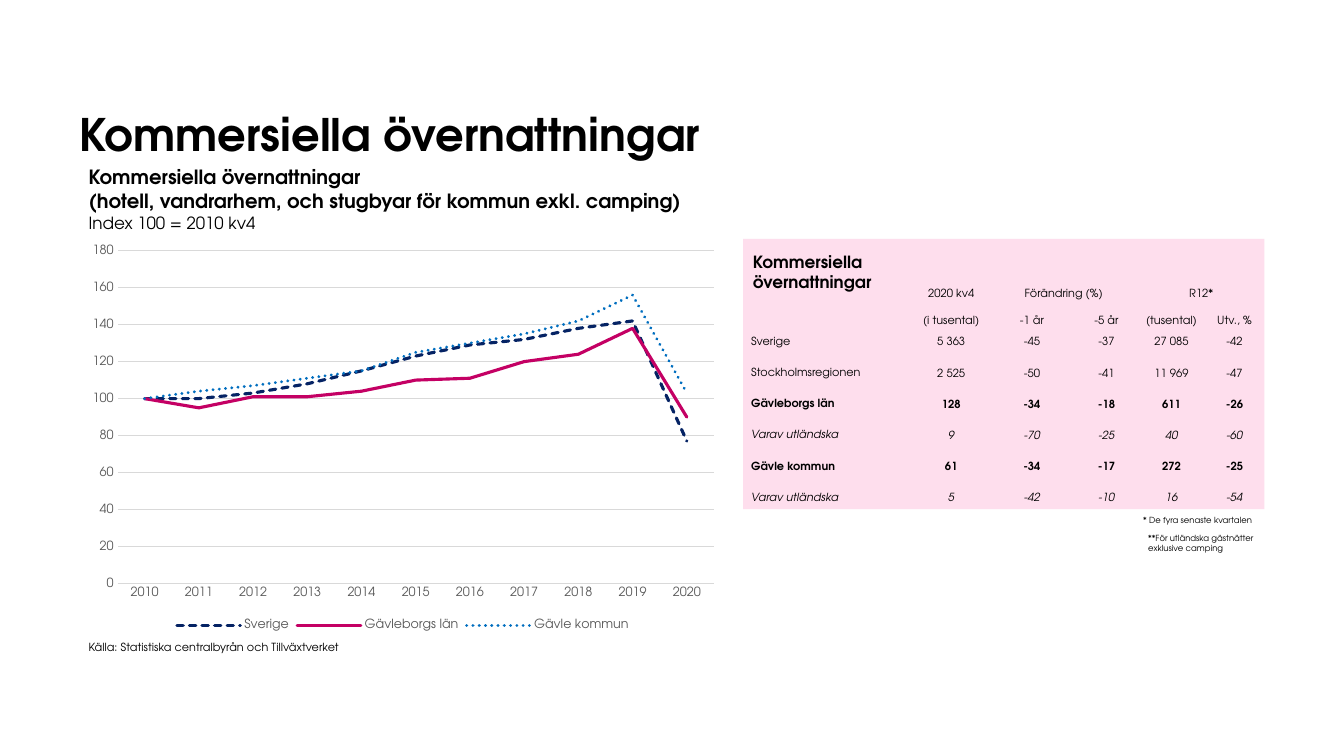
import pptx
import pptx.chart.data
import pptx.dml.color
import pptx.enum.chart
import pptx.enum.dml
import pptx.enum.shapes
import pptx.enum.text
import pptx.oxml.ns
import pptx.util
from lxml import etree

Inches = pptx.util.Inches
Pt = pptx.util.Pt
qn = pptx.oxml.ns.qn
Align = pptx.enum.text.PP_ALIGN
Anchor = pptx.enum.text.MSO_ANCHOR
Dash = pptx.enum.dml.MSO_LINE

FACE = "TeX Gyre Adventor"
NO_GRID = "{2D5ABB26-0587-4C30-8999-92F81FD0307C}"
COLS = [1.69, 0.75, 0.85, 0.63, 0.66, 0.59]
ROWS = [0.26, 0.27] + [0.31] * 6
STAYS = [
    ["", "2020 kv4", "Förändring (%)", "", "R12*", ""],
    ["", "(i tusental)", "-1 år", "-5 år", "(tusental)", "Utv., %"],
    ["Sverige", "5 363", "-45", "-37", "27 085", "-42"],
    ["Stockholmsregionen", "2 525", "-50", "-41", "11 969", "-47"],
    ["Gävleborgs län", "128", "-34", "-18", "611", "-26"],
    ["Varav utländska", "9", "-70", "-25", "40", "-60"],
    ["Gävle kommun", "61", "-34", "-17", "272", "-25"],
    ["Varav utländska", "5", "-42", "-10", "16", "-54"],
]
BOLD = (4, 6)
SLANT = (5, 7)
YEARS = [str(year) for year in range(2010, 2021)]
LINES = [
    ("Sverige", "052364", Dash.SQUARE_DOT,
     [100, 100, 103, 108, 115, 123, 129, 132, 138, 142, 77]),
    ("Gävleborgs län", "C40064", Dash.SOLID,
     [100, 95, 101, 101, 104, 110, 111, 120, 124, 138, 90]),
    ("Gävle kommun", "006EBF", Dash.ROUND_DOT,
     [100, 104, 107, 111, 115, 125, 130, 135, 142, 156, 103]),
]


def color(code):
    """Turn a hex string into a colour."""
    return pptx.dml.color.RGBColor.from_string(code)


def style(font, size, code="000000", bold=False, slant=False):
    """Format a font."""
    font.name, font.size = FACE, Pt(size)
    font.bold, font.italic = bold, slant
    font.color.rgb = color(code)


def write(para, text, align=Align.LEFT, **form):
    """Put formatted text in a paragraph."""
    para.alignment = align
    if text:
        run = para.add_run()
        run.text = text
        style(run.font, **form)
    else:
        style(para.font, **form)


def label(slide, box, lines, wrap=True):
    """Add a text box with one paragraph per line."""
    frame = slide.shapes.add_textbox(*map(Inches, box)).text_frame
    frame.word_wrap = wrap
    frame.auto_size = pptx.enum.text.MSO_AUTO_SIZE.SHAPE_TO_FIT_TEXT
    for num, (text, form) in enumerate(lines):
        para = frame.add_paragraph() if num else frame.paragraphs[0]
        write(para, text, **form)


def head(slide, box):
    """Place the slide title."""
    title = slide.shapes.title
    title.left, title.top, title.width, title.height = map(Inches, box)
    frame = title.text_frame
    frame.margin_left = frame.margin_right = 0
    frame.margin_top = frame.margin_bottom = 0
    frame.vertical_anchor = Anchor.BOTTOM
    frame.word_wrap = True
    write(frame.paragraphs[0], "Kommersiella övernattningar", size=32, bold=True)


def plot(slide, box):
    """Add the index chart with its heading and source."""
    left, top, width, height = box
    strong = dict(size=14, bold=True)
    label(slide, (left, top - 0.78, 6.22, 0.77), [
        ("Kommersiella övernattningar", strong),
        ("(hotell, vandrarhem, och stugbyar för kommun exkl. camping)", strong),
        ("Index 100 = 2010 kv4", dict(size=12)),
    ])
    label(slide, (left, top + height, 2.77, 0.24),
          [("Källa: Statistiska centralbyrån och Tillväxtverket", dict(size=8))],
          wrap=False)
    data = pptx.chart.data.CategoryChartData()
    data.categories = YEARS
    for name, _, _, vals in LINES:
        data.add_series(name, vals)
    kind = pptx.enum.chart.XL_CHART_TYPE.LINE
    chart = slide.shapes.add_chart(kind, *map(Inches, box), data).chart
    style(chart.font, 10)
    chart.has_title = False
    chart.has_legend = True
    chart.legend.position = pptx.enum.chart.XL_LEGEND_POSITION.BOTTOM
    chart.legend.include_in_layout = False
    style(chart.legend.font, 9, "595959")
    chart.plots[0].vary_by_categories = False
    for series, (_, code, dash, _) in zip(chart.plots[0].series, LINES):
        series.smooth = False
        series.marker.style = pptx.enum.chart.XL_MARKER_STYLE.NONE
        line = series.format.line
        line.color.rgb, line.width, line.dash_style = color(code), Pt(2.25), dash
        series._element.find(".//" + qn("a:ln")).set("cap", "rnd")
    axes(chart)
    inset(chart, x=0.06, y=0.03, w=0.92, h=0.84)


def axes(chart):
    """Format both axes and the grid."""
    cat, val = chart.category_axis, chart.value_axis
    for axis in (cat, val):
        axis.major_tick_mark = pptx.enum.chart.XL_TICK_MARK.NONE
        axis.minor_tick_mark = pptx.enum.chart.XL_TICK_MARK.NONE
        style(axis.tick_labels.font, 9, "595959")
    val.minimum_scale, val.maximum_scale, val.major_unit = 0, 180, 20
    val.has_major_gridlines = True
    val.format.line.fill.background()
    for line in (cat.format.line, val.major_gridlines.format.line):
        line.color.rgb, line.width = color("D9D9D9"), Pt(0.75)


def inset(chart, **parts):
    """Fix the inner plot area as shares of the chart."""
    area = chart._chartSpace.find(".//" + qn("c:plotArea"))
    for old in area.findall(qn("c:layout")):
        area.remove(old)
    layout = etree.Element(qn("c:layout"))
    area.insert(0, layout)
    manual = etree.SubElement(layout, qn("c:manualLayout"))
    rules = dict(layoutTarget="inner", xMode="edge", yMode="edge", **parts)
    for tag, val in rules.items():
        etree.SubElement(manual, qn("c:" + tag)).set("val", str(val))


def panel(slide, box):
    """Add the pink panel with its heading, table and notes."""
    left, top, width, height = box
    rect = pptx.enum.shapes.MSO_SHAPE.RECTANGLE
    back = slide.shapes.add_shape(rect, *map(Inches, box))
    back.shadow.inherit = False
    back.fill.solid()
    back.fill.fore_color.rgb = color("FEDEED")
    back.line.fill.background()
    label(slide, (left, top + 0.08, 2.4, 0.3),
          [("Kommersiella övernattningar", dict(size=12, bold=True))])
    grid(slide, (left, top + 0.34, sum(COLS), sum(ROWS)))
    low = top + height
    label(slide, (left + 3.87, low + 0.01, 1.29, 0.2),
          [("* De fyra senaste kvartalen", dict(size=6))], wrap=False)
    label(slide, (left + 3.92, low + 0.19, 1.24, 0.3),
          [("**För utländska gästnätter exklusive camping", dict(size=6))])


def grid(slide, box):
    """Add the table of overnight stays."""
    frame = slide.shapes.add_table(len(ROWS), len(COLS), *map(Inches, box))
    table = frame.table
    table.first_row = table.horz_banding = False
    table._tbl.tblPr.find(qn("a:tableStyleId")).text = NO_GRID
    for col, width in zip(table.columns, COLS):
        col.width = Inches(width)
    for row, height in zip(table.rows, ROWS):
        row.height = Inches(height)
    for num, line in enumerate(STAYS):
        for pos, text in enumerate(line):
            cell = table.cell(num, pos)
            cell.fill.background()
            cell.margin_left = Inches(0.01 if pos else 0.08)
            cell.margin_top = cell.margin_right = Inches(0.01 if pos else 0)
            cell.margin_bottom = 0
            cell.vertical_anchor = Anchor.BOTTOM if num < 2 else Anchor.MIDDLE
            write(cell.text_frame.paragraphs[0], text,
                  align=Align.CENTER if pos else Align.LEFT,
                  size=8, bold=num in BOLD, slant=num in SLANT)
    for pos in (2, 4):
        table.cell(0, pos).merge(table.cell(0, pos + 1))


def main():
    """Build and save the slide."""
    deck = pptx.Presentation()
    deck.slide_width, deck.slide_height = Inches(13.33), Inches(7.5)
    slide = deck.slides.add_slide(deck.slide_layouts[5])
    head(slide, (0.79, 0.37, 9.22, 1.22))
    panel(slide, (7.37, 2.37, 5.17, 2.68))
    plot(slide, (0.78, 2.37, 6.43, 3.93))
    deck.save("out.pptx")


if __name__ == "__main__":
    main()
